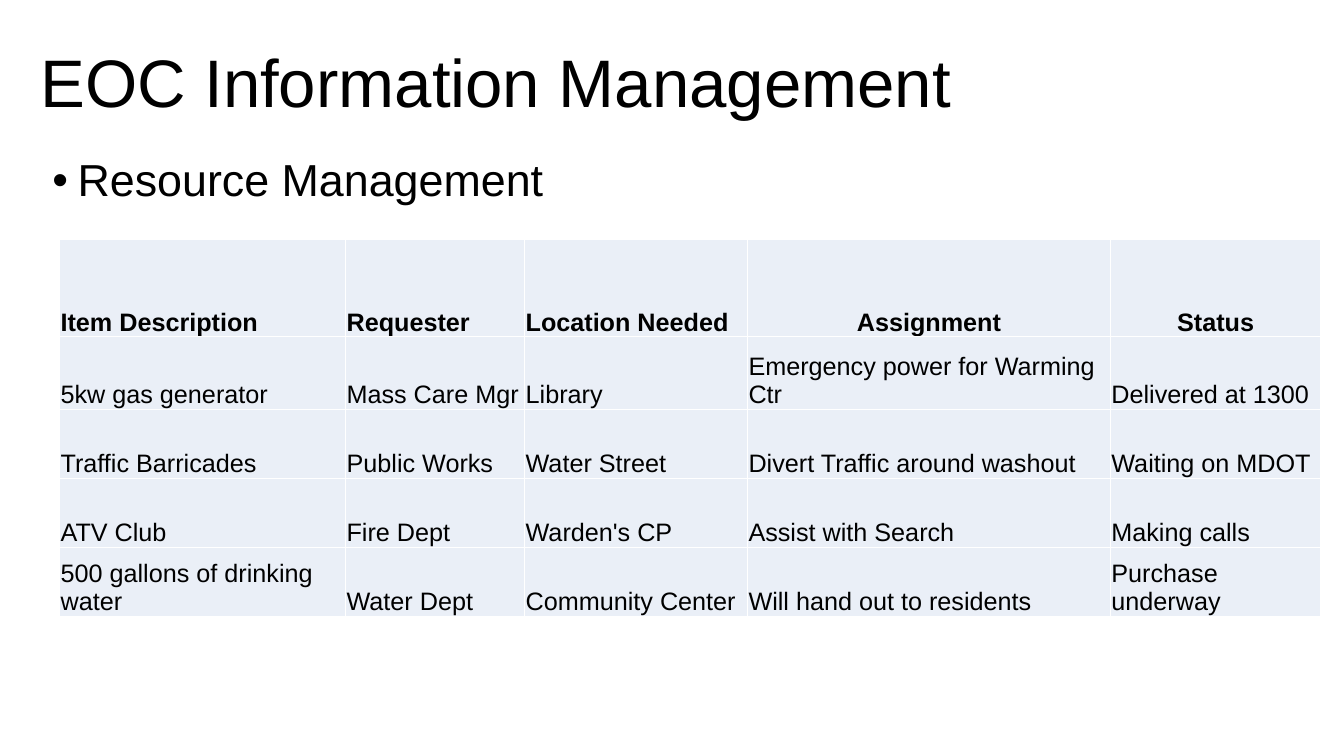
from lxml import etree
from pptx import Presentation
from pptx.dml.color import RGBColor
from pptx.enum import text
from pptx.oxml import ns
from pptx.util import Pt

COLORS = {"text": "000000", "cell": "EAEFF7", "border": "FFFFFF"}


def style(p, size, bold=False, align=text.PP_ALIGN.LEFT):
    p.alignment = align
    for r in p.runs:
        r.font.name = "Arial"
        r.font.size = Pt(size)
        r.font.bold = bold
        r.font.color.rgb = RGBColor.from_string(COLORS["text"])


def place(sp, left, top, width, height, content, anchor):
    sp.left, sp.top, sp.width, sp.height = Pt(left), Pt(top), Pt(width), Pt(height)
    tf = sp.text_frame
    tf.text = content
    tf.word_wrap = True
    tf.auto_size = text.MSO_AUTO_SIZE.NONE
    tf.vertical_anchor = anchor
    p = tf.paragraphs[0]
    p.line_spacing = 0.9
    p.space_before = Pt(0)
    return p


prs = Presentation()
prs.slide_width, prs.slide_height = Pt(960), Pt(540)
s = prs.slides.add_slide(prs.slide_layouts[1])

# Title
p = place(s.shapes.title, 21.6, 23, 922.3, 76.3,
          "EOC Information Management", text.MSO_ANCHOR.MIDDLE)
style(p, 48)

# Bulleted heading
p = place(s.placeholders[1], 30.2, 109.4, 453.6, 61.2,
          "Resource Management", text.MSO_ANCHOR.TOP)
pPr = p._p.get_or_add_pPr()
pPr.set("marL", str(Pt(18)))
pPr.set("indent", str(Pt(-18)))
etree.SubElement(pPr, ns.qn("a:buFont")).set("typeface", "Arial")
etree.SubElement(pPr, ns.qn("a:buChar")).set("char", "•")
style(p, 32)

# Resource table
rows = [
    ["Item Description", "Requester", "Location Needed", "Assignment", "Status"],
    ["5kw gas generator", "Mass Care Mgr", "Library",
     "Emergency power for Warming Ctr", "Delivered at 1300"],
    ["Traffic Barricades", "Public Works", "Water Street",
     "Divert Traffic around washout", "Waiting on MDOT"],
    ["ATV Club", "Fire Dept", "Warden's CP", "Assist with Search", "Making calls"],
    ["500 gallons of drinking water", "Water Dept", "Community Center",
     "Will hand out to residents", "Purchase underway"],
]
col_widths = [204.3, 127.9, 159.2, 259.2, 150.2]
row_heights = [69.5, 51.9, 49.4, 49.3, 49.2]
table = s.shapes.add_table(len(rows), len(col_widths), Pt(42.6), Pt(170.9),
                           Pt(sum(col_widths)), Pt(sum(row_heights))).table
for column, width in zip(table.columns, col_widths):
    column.width = Pt(width)

for i, row in enumerate(rows):
    table.rows[i].height = Pt(row_heights[i])
    for j, value in enumerate(row):
        cell = table.cell(i, j)
        cell.text = value
        cell.vertical_anchor = text.MSO_ANCHOR.BOTTOM
        cell.margin_left = cell.margin_right = cell.margin_top = Pt(0.7)
        cell.margin_bottom = 0
        centred = i == 0 and j >= 3
        style(cell.text_frame.paragraphs[0], 18, bold=i == 0,
              align=text.PP_ALIGN.CENTER if centred else text.PP_ALIGN.LEFT)

        # White borders, then the fill
        tcPr = cell._tc.get_or_add_tcPr()
        for side in ("lnL", "lnR", "lnT", "lnB"):
            ln = etree.SubElement(tcPr, ns.qn("a:" + side), w=str(Pt(1)))
            solid = etree.SubElement(ln, ns.qn("a:solidFill"))
            etree.SubElement(solid, ns.qn("a:srgbClr"), val=COLORS["border"])
        cell.fill.solid()
        cell.fill.fore_color.rgb = RGBColor.from_string(COLORS["cell"])

prs.save("out.pptx")
